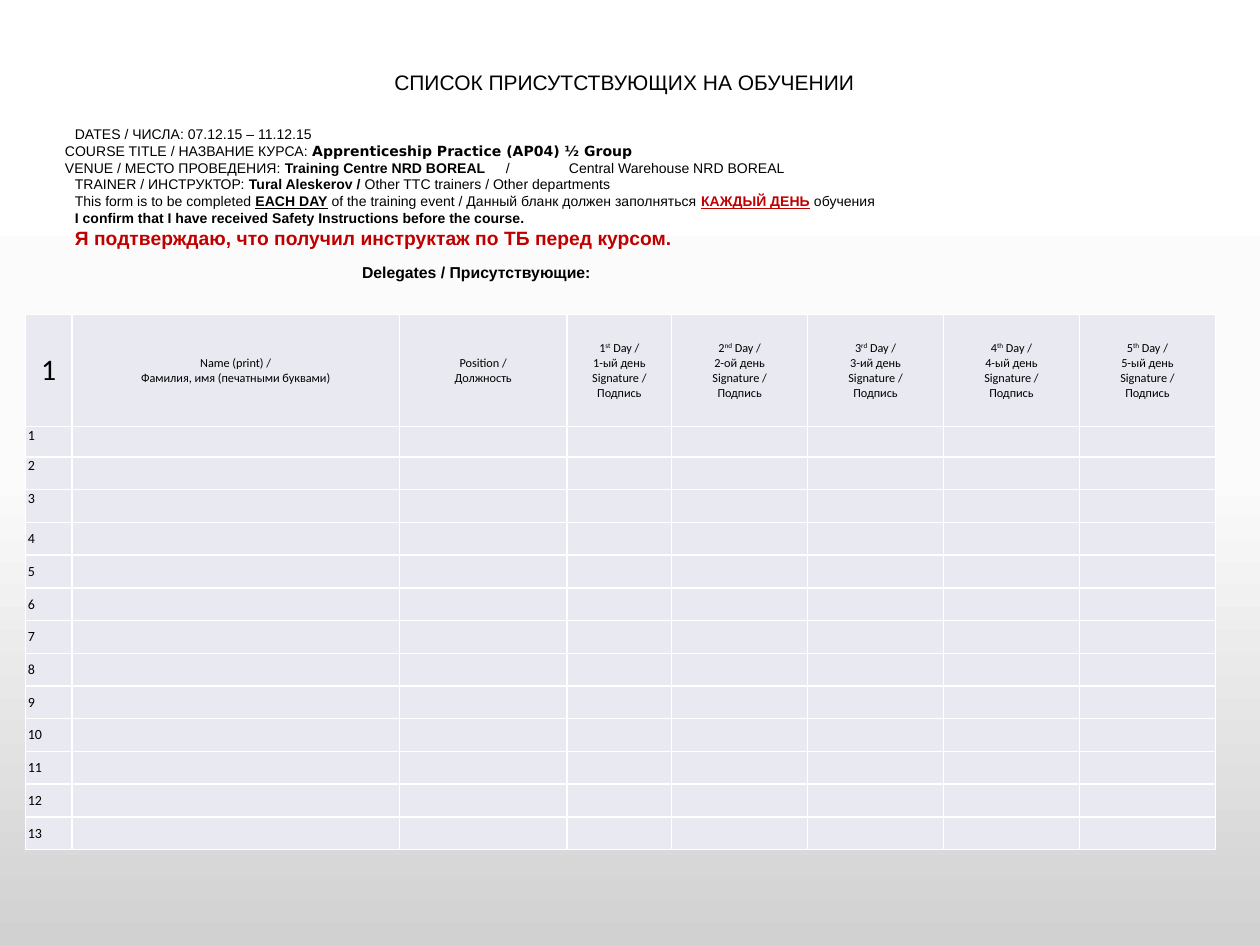
"""Build an attendance sheet slide for a training course."""
import pptx
import pptx.dml.color
import pptx.enum.text
import pptx.oxml.ns
import pptx.util
import lxml.etree

Cm = pptx.util.Cm
ALIGN = pptx.enum.text.PP_ALIGN
MIDDLE = pptx.enum.text.MSO_ANCHOR.MIDDLE
TOP = pptx.enum.text.MSO_ANCHOR.TOP
qn = pptx.oxml.ns.qn

COLOURS = {"text": "000000", "alert": "C00000", "cell": "E9EAF1", "border": "FFFFFF"}
BACKGROUND = [(0, "FFFFFF"), (50, "FBFBFB"), (100, "D1D1D1")]

PLAIN = {}
BOLD = {"bold": True}
MARKED = {"bold": True, "underline": True}
ALERT = {"bold": True, "underline": True, "colour": "alert"}
WIDE, NARROW = 0.75, 0.55

TITLE = [(0, ALIGN.LEFT, [("СПИСОК ПРИСУТСТВУЮЩИХ НА ОБУЧЕНИИ", {"size": 12})])]
DETAILS = [
    (WIDE, ALIGN.JUSTIFY, [("DATES / ЧИСЛА: 07.12.15 – 11.12.15", PLAIN)]),
    (NARROW, ALIGN.LEFT, [
        ("COURSE TITLE / НАЗВАНИЕ КУРСА: ", PLAIN),
        ("Apprenticeship Practice (AP04) ½ Group", {"name": "DejaVu Sans", "bold": True})]),
    (NARROW, ALIGN.LEFT, [
        ("VENUE / МЕСТО ПРОВЕДЕНИЯ: ", PLAIN),
        ("Training Centre NRD BOREAL", BOLD),
        ("\t/\tCentral Warehouse NRD BOREAL", PLAIN)]),
    (WIDE, ALIGN.JUSTIFY, [
        ("TRAINER / ИНСТРУКТОР: ", PLAIN),
        ("Tural Aleskerov / ", BOLD),
        ("Other TTC trainers / Other departments", PLAIN)]),
    (WIDE, ALIGN.JUSTIFY, [
        ("This form is to be completed ", PLAIN),
        ("EACH DAY", MARKED),
        (" of the training event / Данный бланк должен заполняться ", PLAIN),
        ("КАЖДЫЙ ДЕНЬ", ALERT),
        (" обучения", PLAIN)]),
    (WIDE, ALIGN.LEFT, [
        ("I confirm that I have received Safety Instructions before the course.", BOLD)]),
    (WIDE, ALIGN.LEFT, [
        ("Я подтверждаю, что получил инструктаж по ТБ перед курсом.",
         {"size": 11, "bold": True, "colour": "alert"})]),
]
DELEGATES = [(WIDE, ALIGN.LEFT, [("Delegates / Присутствующие:", {"size": 9, "bold": True})])]
VENUE_LINE = 2
VENUE_TABS = [9.22, 9.62]

BOXES = [
    (TITLE, (7.7, 1.27, 12.7, 0.76), True),
    (DETAILS, (0.51, 2.41, 24, 2.77), True),
    (DELEGATES, (6.3, 5.18, 5.92, 0.64), False),
]

HEADINGS = [["Name (print) /", "Фамилия, имя (печатными буквами)"], ["Position /", "Должность"]]
DAYS = [("1", "st", "ый"), ("2", "nd", "ой"), ("3", "rd", "ий"), ("4", "th", "ый"), ("5", "th", "ый")]
COLUMN_WIDTHS = [0.94, 6.6, 3.38, 2.11] + [2.74] * 4
DELEGATE_COUNT = 13
ROW_HEIGHTS = [2.26, 0.61] + [0.66] * (DELEGATE_COUNT - 1)
TOP_ALIGNED_ROWS = (1, 2, 3)


def colour(name):
    return pptx.dml.color.RGBColor.from_string(COLOURS[name])


def write_runs(para, runs, base):
    for text, changes in runs:
        values = {"colour": "text", **base, **changes}
        span = para.add_run()
        span.text = text
        span.font.color.rgb = colour(values.pop("colour"))
        values["size"] = pptx.util.Pt(values["size"])
        raised = values.pop("raised", False)
        for key, value in values.items():
            setattr(span.font, key, value)
        if raised:
            span.font._element.set("baseline", "30000")


def write_paragraphs(frame, paragraphs, base):
    for index, (indent, alignment, runs) in enumerate(paragraphs):
        para = frame.add_paragraph() if index else frame.paragraphs[0]
        para.alignment = alignment
        if indent:
            properties = para._p.get_or_add_pPr()
            properties.set("marL", str(Cm(indent)))
            properties.set("indent", "0")
        write_runs(para, runs, base)


def paint_background(page):
    fill = page.background.fill
    fill.gradient()
    fill.gradient_angle = 270
    stops = page._element.find(".//" + qn("a:gsLst"))
    for stop in list(stops):
        stops.remove(stop)
    for position, value in BACKGROUND:
        stop = lxml.etree.SubElement(stops, qn("a:gs"), pos=str(position * 1000))
        lxml.etree.SubElement(stop, qn("a:srgbClr"), val=value)


def add_box(page, paragraphs, place, wrap):
    frame = page.shapes.add_textbox(*map(Cm, place)).text_frame
    frame.word_wrap = wrap
    write_paragraphs(frame, paragraphs, {"name": "Arial", "size": 8})
    return frame


def set_tabs(para, positions):
    tabs = lxml.etree.SubElement(para._p.get_or_add_pPr(), qn("a:tabLst"))
    for position in positions:
        lxml.etree.SubElement(tabs, qn("a:tab"), pos=str(Cm(position)), algn="l")


def style_cell(cell, anchor):
    margins = {"margin_left": 0.05, "margin_right": 0.05, "margin_top": 0, "margin_bottom": 0}
    for key, value in margins.items():
        setattr(cell, key, Cm(value))
    cell.vertical_anchor = anchor
    properties = cell._tc.get_or_add_tcPr()
    for side in ("lnL", "lnR", "lnT", "lnB"):
        line = lxml.etree.SubElement(properties, qn("a:" + side), w="12700")
        paint = lxml.etree.SubElement(line, qn("a:solidFill"))
        lxml.etree.SubElement(paint, qn("a:srgbClr"), val=COLOURS["border"])
    cell.fill.solid()
    cell.fill.fore_color.rgb = colour("cell")


def header_cells():
    yield [[("1", {"size": 17})]]
    for lines in HEADINGS:
        yield [[(line, PLAIN)] for line in lines]
    for number, suffix, ending in DAYS:
        yield [[(number, PLAIN), (suffix, {"raised": True}), (" Day /", PLAIN)],
               [(f"{number}-{ending} день", PLAIN)],
               [("Signature /", PLAIN)],
               [("Подпись", PLAIN)]]


def add_register(page):
    place = (0.51, 6.34, sum(COLUMN_WIDTHS), sum(ROW_HEIGHTS))
    table = page.shapes.add_table(
        len(ROW_HEIGHTS), len(COLUMN_WIDTHS), *map(Cm, place)).table
    table.first_row = table.horz_banding = False
    for column, width in zip(table.columns, COLUMN_WIDTHS):
        column.width = Cm(width)
    for row, height in zip(table.rows, ROW_HEIGHTS):
        row.height = Cm(height)
    for index, row in enumerate(table.rows):
        for cell in row.cells:
            style_cell(cell, TOP if index in TOP_ALIGNED_ROWS else MIDDLE)
    for cell, lines in zip(table.rows[0].cells, header_cells()):
        paragraphs = [(0, ALIGN.CENTER, runs) for runs in lines]
        write_paragraphs(cell.text_frame, paragraphs, {"name": "Calibri", "size": 7})
    for number in range(1, DELEGATE_COUNT + 1):
        first, *blanks = table.rows[number].cells
        write_paragraphs(first.text_frame, [(0, ALIGN.LEFT, [(str(number), PLAIN)])],
                         {"name": "Calibri", "size": 8})
        for cell in blanks:
            para = cell.text_frame.paragraphs[0]
            lxml.etree.SubElement(para._p, qn("a:endParaRPr"), sz="800")


def main():
    deck = pptx.Presentation()
    deck.slide_width, deck.slide_height = Cm(25.4), Cm(19.05)
    page = deck.slides.add_slide(deck.slide_layouts[6])
    paint_background(page)
    frames = [add_box(page, *box) for box in BOXES]
    set_tabs(frames[1].paragraphs[VENUE_LINE], VENUE_TABS)
    add_register(page)
    deck.save("out.pptx")


if __name__ == "__main__":
    main()
